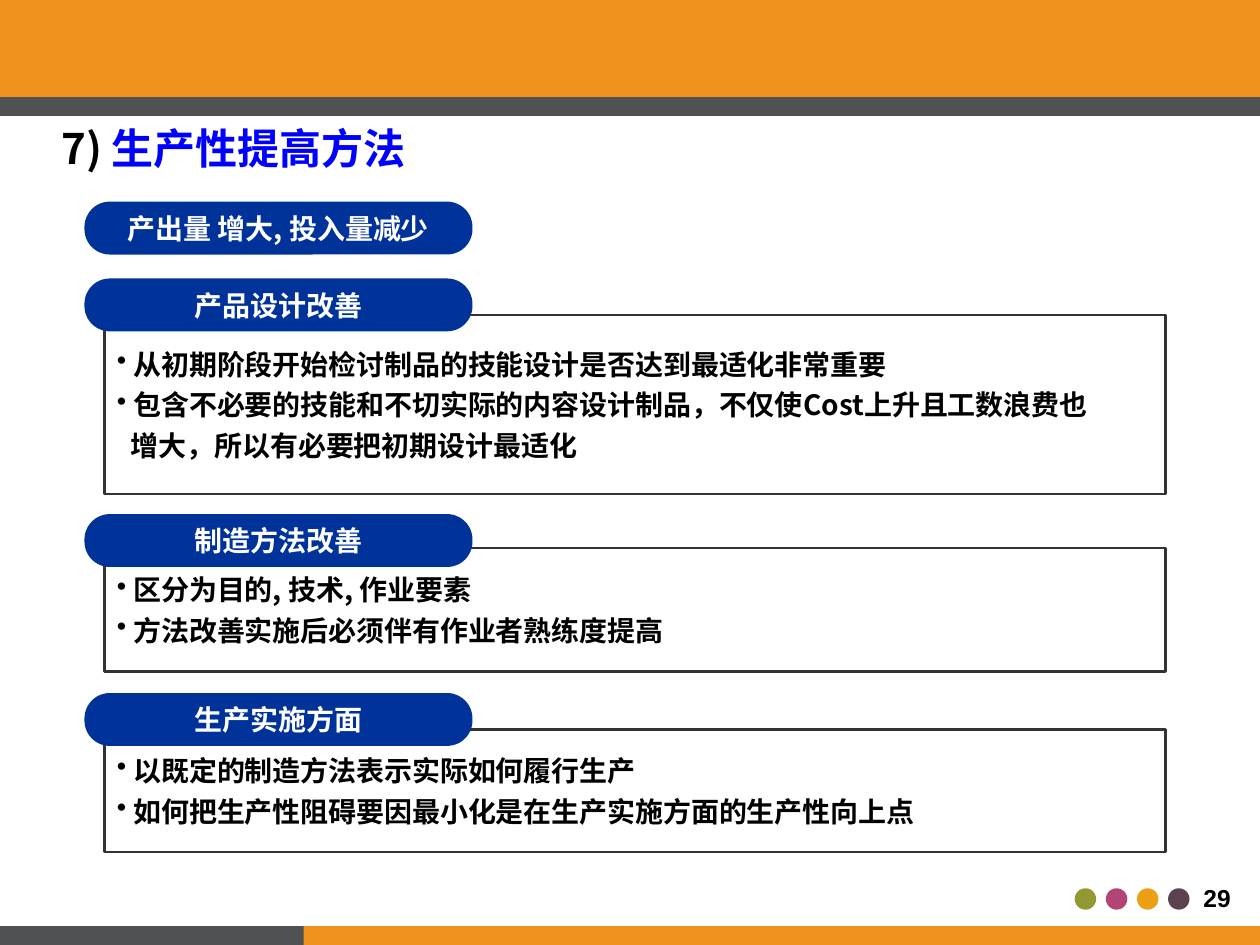
from pptx import Presentation
from pptx import util as u
from pptx.dml.color import RGBColor
from pptx.enum import shapes, text
from pptx.oxml.ns import qn
from lxml import etree

CJK = "Noto Sans CJK SC"
ORANGE, GRAY, NAVY, WHITE, BLACK = "F0901D", "505153", "003399", "FFFFFF", "000000"
RECT = shapes.MSO_SHAPE.RECTANGLE

# Content
TITLE = [("7) ", BLACK), ("生产性提高方法", "0000FF")]
PAGE_NUMBER = "29"
DOT_COLORS = ["939932", "B24476", "EC9F14", "5C414F"]
BARS = [  # left, top, width, height, colour
    (0, 0, 10, 0.77, ORANGE),
    (0, 0.77, 10, 0.15, GRAY),
    (1.95, 7.35, 8.05, 0.15, ORANGE),
    (0, 7.35, 2.41, 0.15, GRAY),
]
SECTIONS = [  # heading, heading top, panel top, panel height, (bulleted, line)
    ("产出量 增大, 投入量减少", 1.6, None, None, []),
    ("产品设计改善", 2.21, 2.5, 1.42, [
        (True, "从初期阶段开始检讨制品的技能设计是否达到最适化非常重要"),
        (True, "包含不必要的技能和不切实际的内容设计制品，不仅使Cost上升且工数浪费也"),
        (False, "增大，所以有必要把初期设计最适化"),
    ]),
    ("制造方法改善", 4.08, 4.35, 0.98, [
        (True, "区分为目的, 技术, 作业要素"),
        (True, "方法改善实施后必须伴有作业者熟练度提高"),
    ]),
    ("生产实施方面", 5.5, 5.79, 0.97, [
        (True, "以既定的制造方法表示实际如何履行生产"),
        (True, "如何把生产性阻碍要因最小化是在生产实施方面的生产性向上点"),
    ]),
]


def rgb(value):
    return RGBColor.from_string(value)


def apply(target, formats):
    for name, value in formats.items():
        setattr(target, name, value)


def add_run(paragraph, words, color, size=16, font=CJK):
    run = paragraph.add_run()
    run.text = words
    apply(run.font, {"name": font, "size": u.Pt(size), "bold": True})
    run.font.color.rgb = rgb(color)
    east_asian = etree.SubElement(run.font._element, qn("a:ea"))
    east_asian.set("typeface", font)


def add_box(slide, kind, left, top, width, height, fill, line=None):
    shape = slide.shapes.add_shape(kind, *map(u.Inches, (left, top, width, height)))
    shape.shadow.inherit = False
    shape.fill.solid()
    shape.fill.fore_color.rgb = rgb(fill)
    if line:
        shape.line.color.rgb = rgb(line)
        shape.line.width = u.Pt(1.25)
    else:
        shape.line.fill.background()
    apply(shape.text_frame, {"word_wrap": False, "vertical_anchor": text.MSO_ANCHOR.MIDDLE})
    return shape


def add_label(slide, left, top, width, height, **formats):
    frame = slide.shapes.add_textbox(*map(u.Inches, (left, top, width, height))).text_frame
    apply(frame, {"auto_size": text.MSO_AUTO_SIZE.SHAPE_TO_FIT_TEXT, **formats})
    return frame.paragraphs[0]


def add_panel(slide, top, height, lines):
    frame = add_box(slide, RECT, 0.83, top, 8.42, height, WHITE, "333333").text_frame
    frame.margin_right = u.Inches(0.14)
    for index, (bulleted, words) in enumerate(lines):
        paragraph = frame.add_paragraph() if index else frame.paragraphs[0]
        apply(paragraph, {"alignment": text.PP_ALIGN.LEFT,
                          "space_before": u.Pt(4 if index else 0)})
        properties = paragraph._p.get_or_add_pPr()
        indent = u.Inches(0.13 if bulleted else 0.11)
        properties.set("marL", str(indent))
        properties.set("indent", str(-indent if bulleted else 0))
        if bulleted:
            etree.SubElement(properties, qn("a:buChar")).set("char", "•")
        else:
            etree.SubElement(properties, qn("a:buNone"))
        add_run(paragraph, words, BLACK)


def add_heading(slide, top, words):
    pill = add_box(slide, shapes.MSO_SHAPE.ROUNDED_RECTANGLE, 0.67, top, 3.08, 0.42, NAVY)
    pill.adjustments[0] = 0.48
    paragraph = pill.text_frame.paragraphs[0]
    paragraph.alignment = text.PP_ALIGN.CENTER
    add_run(paragraph, words, WHITE)


def main():
    presentation = Presentation()
    apply(presentation, {"slide_width": u.Inches(10), "slide_height": u.Inches(7.5)})
    slide = presentation.slides.add_slide(presentation.slide_layouts[6])

    # Dots and page number
    for index, color in enumerate(DOT_COLORS):
        add_box(slide, shapes.MSO_SHAPE.OVAL, 8.53 + index * 0.247, 7.05, 0.17, 0.17, color)
    number = add_label(slide, 9.44, 6.96, 0.44, 0.34, word_wrap=False)
    number.alignment = text.PP_ALIGN.CENTER
    add_run(number, PAGE_NUMBER, BLACK, 14, "Arial")

    # Header and footer bars
    for left, top, width, height, color in BARS:
        add_box(slide, RECT, left, top, width, height, color)

    # Sections: each heading overlaps the top of its panel
    for heading, heading_top, panel_top, panel_height, lines in SECTIONS:
        if lines:
            add_panel(slide, panel_top, panel_height, lines)
        add_heading(slide, heading_top, heading)

    # Title
    title = add_label(slide, 0.25, 0.92, 4.58, 0.5, word_wrap=True, margin_left=u.Inches(0.24))
    for words, color in TITLE:
        add_run(title, words, color, 24)

    presentation.save("out.pptx")


if __name__ == "__main__":
    main()
